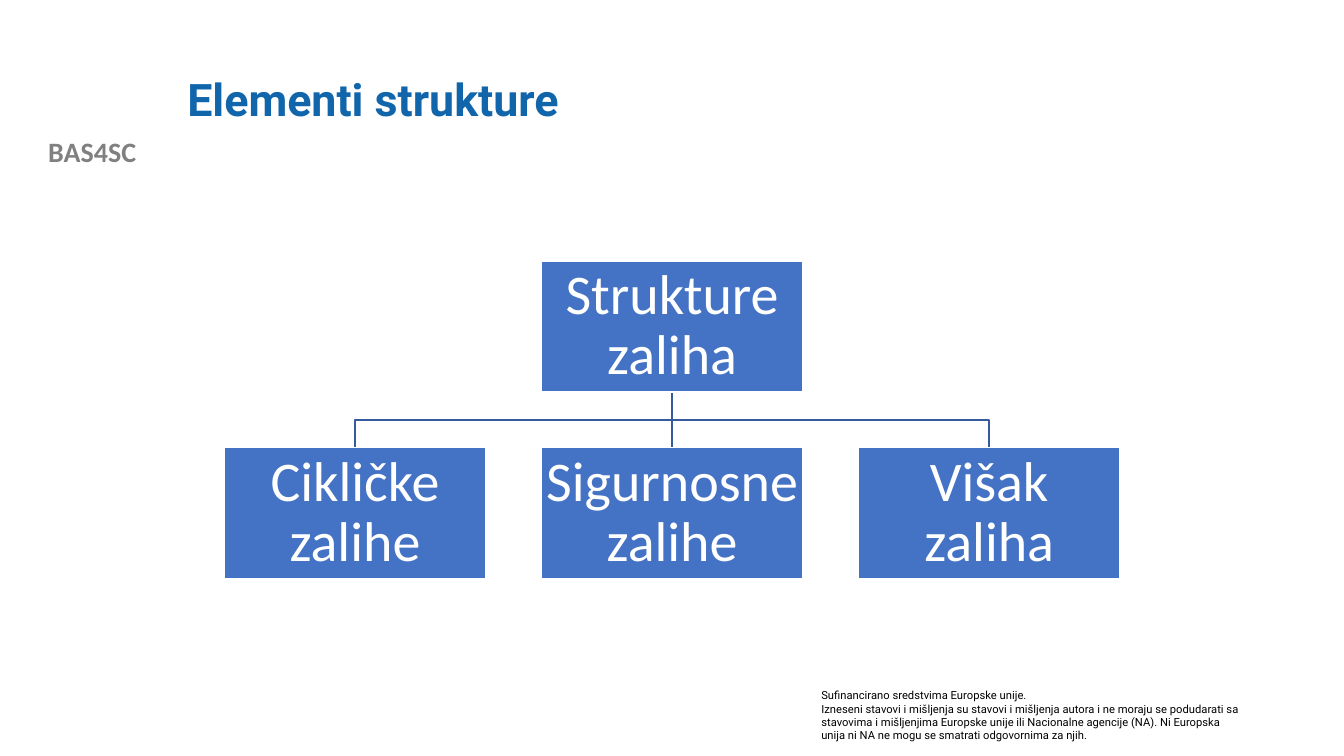
from dataclasses import dataclass

from lxml.etree import SubElement
from pptx import Presentation
from pptx.dml.color import RGBColor
from pptx.enum.shapes import MSO_CONNECTOR, MSO_SHAPE
from pptx.enum.text import MSO_ANCHOR, PP_ALIGN
from pptx.oxml.ns import qn
from pptx.slide import Slide
from pptx.text.text import TextFrame
from pptx.util import Pt


@dataclass(frozen=True)
class Style:
    font: str
    size: float
    color: RGBColor
    bold: bool = False
    align: PP_ALIGN = PP_ALIGN.LEFT
    spacing: float = 1.0


@dataclass(frozen=True)
class Theme:
    fill: RGBColor = RGBColor(0x44, 0x72, 0xC4)
    edge: RGBColor = RGBColor(0xFF, 0xFF, 0xFF)
    link: RGBColor = RGBColor(0x36, 0x5B, 0x9D)
    stroke: float = 1
    title: Style = Style("Roboto", 32, RGBColor(0x10, 0x65, 0xAB), True, spacing=0.9)
    project: Style = Style("Calibri", 20, RGBColor(0x80, 0x80, 0x80), True, PP_ALIGN.CENTER)
    notice: Style = Style("Roboto", 8, RGBColor(0, 0, 0))
    node: Style = Style("Calibri", 40, RGBColor(0xFF, 0xFF, 0xFF), align=PP_ALIGN.CENTER, spacing=0.9)


@dataclass(frozen=True)
class Label:
    text: str
    left: float
    top: float
    width: float
    height: float
    style: Style
    anchor: MSO_ANCHOR = MSO_ANCHOR.TOP


@dataclass(frozen=True)
class Node:
    text: str
    left: float
    top: float

    @property
    def center(self) -> float:
        return self.left + NODE_W / 2


THEME = Theme()
NODE_W, NODE_H = 187.2, 93.6
PITCH = 226.5
ROOT = Node("Strukture zaliha", 386.5, 186.5)
CHILD_TOP = 319.9
CHILDREN = [
    Node(text, ROOT.left + (i - 1) * PITCH, CHILD_TOP)
    for i, text in enumerate(["Cikličke zalihe", "Sigurnosne zalihe", "Višak zaliha"])
]
LABELS = [
    Label("BAS4SC", 0, 92.2, 131.8, 31.5, THEME.project),
    Label(
        "Sufinancirano sredstvima Europske unije.\n"
        "Izneseni stavovi i mišljenja su stavovi i mišljenja autora i ne moraju se "
        "podudarati sa stavovima i mišljenjima Europske unije ili Nacionalne agencije "
        "(NA). Ni Europska unija ni NA ne mogu se smatrati odgovornima za njih.",
        579.6, 488.2, 314.6, 46, THEME.notice,
    ),
    Label("Elementi strukture", 126.7, 28.8, 767.5, 87.8, THEME.title, MSO_ANCHOR.MIDDLE),
]


def write(frame: TextFrame, text: str, style: Style, anchor: MSO_ANCHOR) -> None:
    frame.text = text
    frame.word_wrap = True
    frame.vertical_anchor = anchor
    for par in frame.paragraphs:
        par.alignment = style.align
        par.line_spacing = style.spacing
        for run in par.runs:
            run.font.name = style.font
            run.font.size = Pt(style.size)
            run.font.bold = style.bold
            run.font.color.rgb = style.color


def add_label(slide: Slide, label: Label) -> None:
    box = slide.shapes.add_textbox(
        Pt(label.left), Pt(label.top), Pt(label.width), Pt(label.height)
    )
    write(box.text_frame, label.text, label.style, label.anchor)


def add_node(slide: Slide, node: Node) -> None:
    box = slide.shapes.add_shape(
        MSO_SHAPE.RECTANGLE, Pt(node.left), Pt(node.top), Pt(NODE_W), Pt(NODE_H)
    )
    box.shadow.inherit = False
    box.fill.solid()
    box.fill.fore_color.rgb = THEME.fill
    box.line.color.rgb = THEME.edge
    box.line.width = Pt(THEME.stroke)
    frame = box.text_frame
    frame.margin_left = frame.margin_right = Pt(2)
    frame.margin_top = frame.margin_bottom = Pt(2)
    write(frame, node.text, THEME.node, MSO_ANCHOR.MIDDLE)


def add_link(slide: Slide, parent: Node, child: Node) -> None:
    """Join two nodes, straight when aligned and stepped otherwise."""
    start, end = parent.top + NODE_H, child.top
    if parent.center == child.center:
        link = slide.shapes.add_connector(
            MSO_CONNECTOR.STRAIGHT,
            Pt(parent.center), Pt(start), Pt(child.center), Pt(end),
        )
        SubElement(link._element.spPr, qn("a:effectLst"))
    else:
        middle = (start + end) / 2
        path = slide.shapes.build_freeform(Pt(parent.center), Pt(start))
        path.add_line_segments(
            [
                (Pt(parent.center), Pt(middle)),
                (Pt(child.center), Pt(middle)),
                (Pt(child.center), Pt(end)),
            ],
            close=False,
        )
        link = path.convert_to_shape()
        link.shadow.inherit = False
        link.fill.background()
    link.line.color.rgb = THEME.link
    link.line.width = Pt(THEME.stroke)


def main() -> None:
    deck = Presentation()
    deck.slide_width, deck.slide_height = Pt(960), Pt(540)
    slide = deck.slides.add_slide(deck.slide_layouts[6])
    for label in LABELS:
        add_label(slide, label)
    for child in CHILDREN:
        add_link(slide, ROOT, child)
    for node in [ROOT, *CHILDREN]:
        add_node(slide, node)
    deck.save("out.pptx")


if __name__ == "__main__":
    main()
